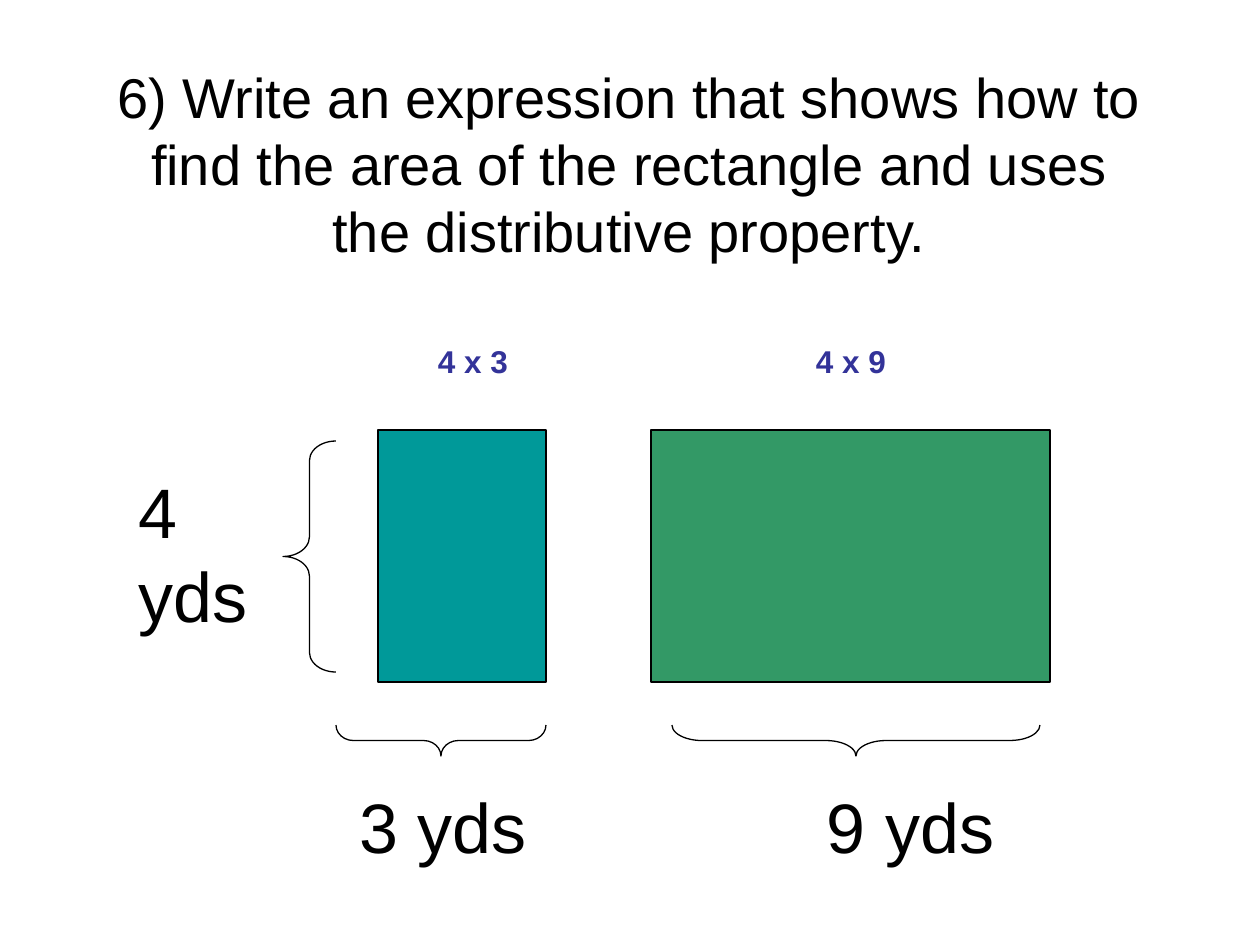
from pptx import Presentation
from pptx.dml.color import RGBColor
from pptx.enum.shapes import MSO_SHAPE as Shape
from pptx.enum.text import MSO_ANCHOR as Anchor, MSO_AUTO_SIZE as AutoSize, PP_ALIGN as Align
from pptx.util import Emu, Pt

PX = 914400 / 126  # EMU in one px
BLACK = RGBColor(0x00, 0x00, 0x00)
TEAL = RGBColor(0x00, 0x99, 0x99)
GREEN = RGBColor(0x33, 0x99, 0x66)
INDIGO = RGBColor(0x33, 0x33, 0x99)

TITLE_FONT = {"name": "Arial", "size": Pt(32)}
LENGTH_FONT = {"name": "Arial", "size": Pt(40)}
PRODUCT_FONT = {"name": "Arial", "size": Pt(18), "bold": True}


def px(length):
    return Emu(round(length * PX))


def box(*lengths):
    return [px(length) for length in lengths]


def set_text(shape, text, font, color, align):
    frame = shape.text_frame
    frame.word_wrap = True
    paragraph = frame.paragraphs[0]
    paragraph.alignment = align
    run = paragraph.add_run()
    run.text = text
    for name, value in font.items():
        setattr(run.font, name, value)
    run.font.color.rgb = color


def add_title(slide, text, position):
    title = slide.shapes.title
    title.left, title.top, title.width, title.height = box(*position)
    set_text(title, text, TITLE_FONT, BLACK, Align.CENTER)
    title.text_frame.vertical_anchor = Anchor.MIDDLE
    title.text_frame.auto_size = AutoSize.NONE


def add_label(slide, text, position, font, color=BLACK, align=Align.LEFT, inset=13):
    label = slide.shapes.add_textbox(*box(*position))
    set_text(label, text, font, color, align)
    label.text_frame.margin_left = px(inset)
    label.text_frame.auto_size = AutoSize.SHAPE_TO_FIT_TEXT


def add_outlined(slide, kind, position, fill=None):
    shape = slide.shapes.add_shape(kind, *box(*position))
    shape.shadow.inherit = False
    if fill is None:
        shape.fill.background()
    else:
        shape.fill.solid()
        shape.fill.fore_color.rgb = fill
    shape.line.color.rgb = BLACK
    shape.line.width = Pt(0.75)
    return shape


def add_brace(slide, position, curve, rotation=0):
    brace = add_outlined(slide, Shape.LEFT_BRACE, position)
    brace.adjustments[0] = curve
    brace.adjustments[1] = 0.5
    brace.rotation = rotation


def add_bottom_brace(slide, left, top, width, height, curve):
    # A left brace turned on its side about its centre
    shift = (width - height) / 2
    add_brace(slide, (left + shift, top - shift, height, width), curve, 270)


def main():
    presentation = Presentation()
    presentation.slide_width, presentation.slide_height = box(1260, 945)
    slide = presentation.slides.add_slide(presentation.slide_layouts[5])

    add_title(slide, "6) Write an expression that shows how to find the area of the "
              "rectangle and uses the distributive property.", (94, 84, 1071, 158))

    # The two parts of the rectangle
    add_outlined(slide, Shape.RECTANGLE, (378, 430, 168, 252), TEAL)
    add_outlined(slide, Shape.RECTANGLE, (651, 430, 399, 252), GREEN)

    # Side lengths
    add_label(slide, "4 yds", (126, 462, 158, 180), LENGTH_FONT)
    add_label(slide, "3 yds", (346, 777, 210, 97), LENGTH_FONT)
    add_label(slide, "9 yds", (756, 777, 388, 97), LENGTH_FONT, inset=71)

    # Braces along the sides
    add_brace(slide, (283, 441, 53, 231), 0.37)
    add_bottom_brace(slide, 672, 725, 368, 31, 0.97)
    add_bottom_brace(slide, 336, 725, 210, 31, 0.56)

    # Area of each part
    for text, left in (("4 x 3", 399), ("4 x 9", 777)):
        add_label(slide, text, (left, 336, 147, 63), PRODUCT_FONT, INDIGO, Align.CENTER)

    presentation.save("out.pptx")


if __name__ == "__main__":
    main()
